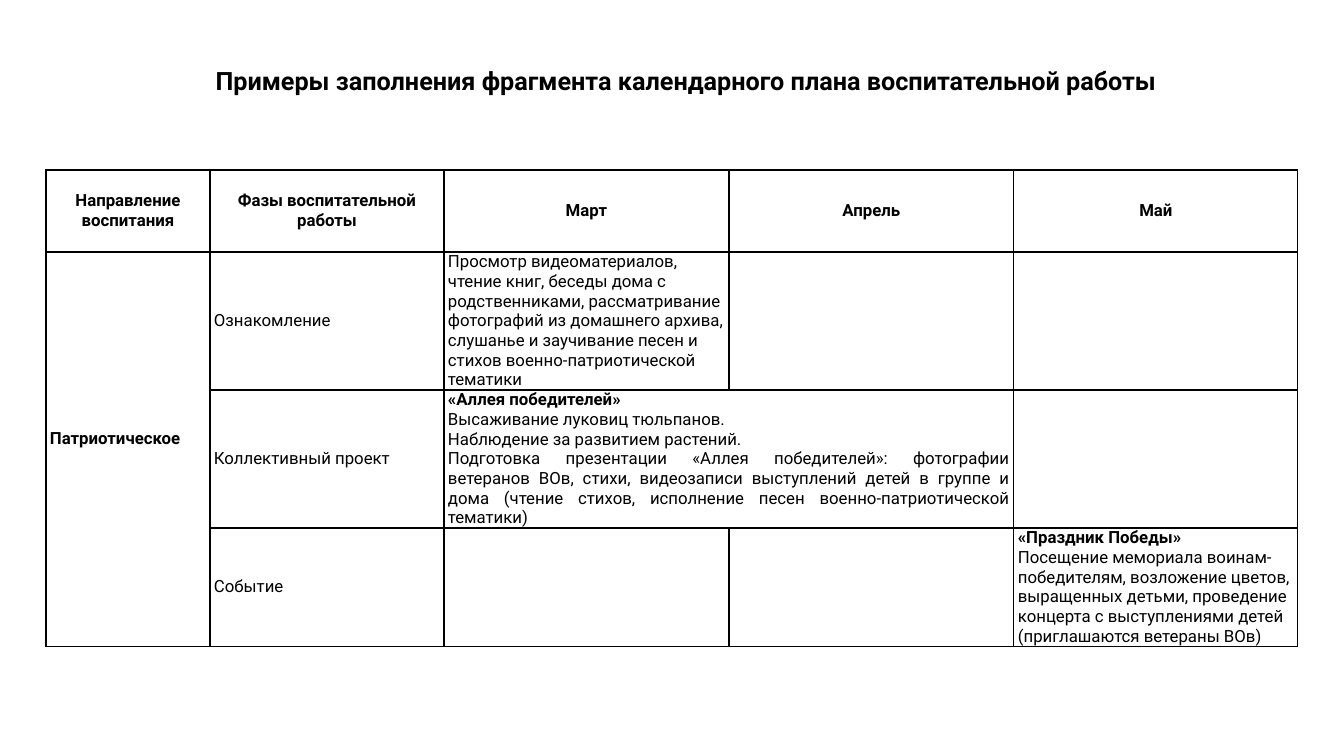
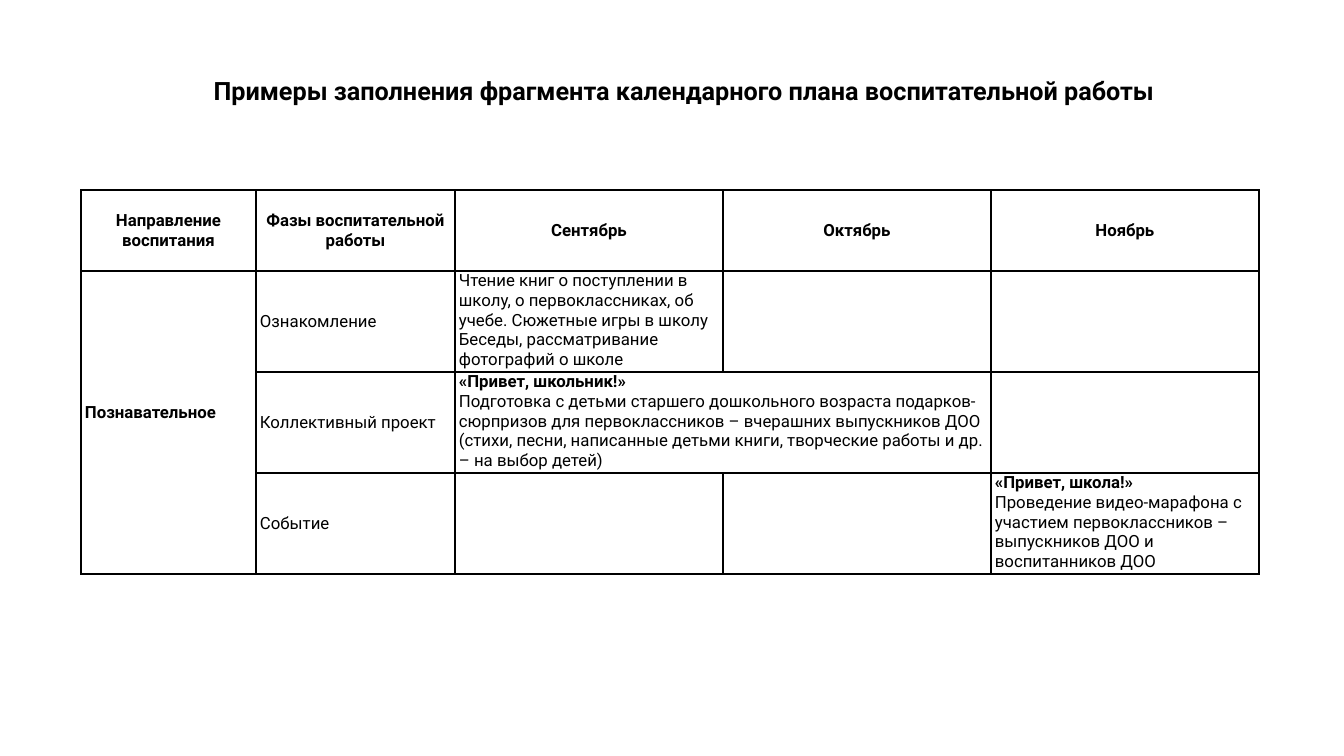
from dataclasses import dataclass

from lxml.etree import SubElement
from pptx import Presentation
from pptx.dml.color import RGBColor
from pptx.enum.text import MSO_ANCHOR, PP_ALIGN
from pptx.oxml import parse_xml
from pptx.oxml.ns import nsdecls, qn
from pptx.util import Emu, Pt

SLIDE_W, SLIDE_H = 1344, 756
EMU_PER_PX = 12192000 / SLIDE_W

BLACK = RGBColor(0x00, 0x00, 0x00)
FONT = "Roboto"
TITLE_FONT = {"name": FONT, "size": Pt(18), "bold": True}
CELL_FONT = {"name": FONT, "size": Pt(12)}

TITLE = "Примеры заполнения фрагмента календарного плана воспитательной работы"
TITLE_W, TITLE_H = 1186, 40
HEADINGS = ["Направление воспитания", "Фазы воспитательной работы"]
PHASES = ["Ознакомление", "Коллективный проект", "Событие"]
CELL_INSET = 4
DIRECTION_LIFT = 20


@dataclass
class Plan:
    title_at: tuple
    table_at: tuple
    cols: list
    rows: list
    months: list
    direction: str
    intro: list
    project: list
    event: list
    project_align: PP_ALIGN = PP_ALIGN.LEFT
    text_anchor: MSO_ANCHOR = MSO_ANCHOR.MIDDLE


PLANS = [
    Plan(
        title_at=(93, 60),
        table_at=(46, 170),
        cols=[164, 234, 285, 285, 284],
        rows=[82, 138, 138, 118],
        months=["Март", "Апрель", "Май"],
        direction="Патриотическое",
        intro=["Просмотр видеоматериалов, чтение книг, беседы дома с родственниками, "
               "рассматривание фотографий из домашнего архива, слушанье и заучивание "
               "песен и стихов военно-патриотической тематики"],
        project=["«Аллея победителей»",
                 "Высаживание луковиц тюльпанов.",
                 "Наблюдение за развитием растений.",
                 "Подготовка презентации «Аллея победителей»: фотографии ветеранов ВОв, "
                 "стихи, видеозаписи выступлений детей в группе и дома (чтение стихов, "
                 "исполнение песен военно-патриотической тематики)"],
        event=["«Праздник Победы»",
               "Посещение мемориала воинам-победителям, возложение цветов, выращенных "
               "детьми, проведение концерта с выступлениями детей (приглашаются "
               "ветераны ВОв)"],
        project_align=PP_ALIGN.JUSTIFY,
    ),
    Plan(
        title_at=(91, 70),
        table_at=(81, 190),
        cols=[175, 199, 268, 268, 268],
        rows=[81, 101, 101, 101],
        months=["Сентябрь", "Октябрь", "Ноябрь"],
        direction="Познавательное",
        intro=["Чтение книг о поступлении в школу, о первоклассниках, об учебе. "
               "Сюжетные игры в школу",
               "Беседы, рассматривание фотографий о школе"],
        project=["«Привет, школьник!»",
                 "Подготовка с детьми старшего дошкольного возраста подарков-сюрпризов "
                 "для первоклассников – вчерашних выпускников ДОО (стихи, песни, "
                 "написанные детьми книги, творческие работы и др. – на выбор детей)"],
        event=["«Привет, школа!»",
               "Проведение видео-марафона с участием первоклассников – выпускников ДОО "
               "и воспитанников ДОО"],
        text_anchor=MSO_ANCHOR.TOP,
    ),
]


def px(n):
    return Emu(round(n * EMU_PER_PX))


def set_font(font, values):
    for name, value in values.items():
        setattr(font, name, value)
    font.color.rgb = BLACK


def format_cell(cell):
    """Give the cell no fill, tight insets and a thin black border on each side."""
    cell.fill.background()
    cell.margin_left = cell.margin_right = px(CELL_INSET)
    cell.margin_top = cell.margin_bottom = 0
    tc_pr = cell._tc.get_or_add_tcPr()
    for i, side in enumerate("LRTB"):
        ln = parse_xml(f'<a:ln{side} {nsdecls("a")} w="{Pt(1)}"/>')
        fill = SubElement(ln, qn("a:solidFill"))
        SubElement(fill, qn("a:srgbClr"), val=str(BLACK))
        tc_pr.insert(i, ln)


def write_cell(cell, texts, bold_count=0, align=PP_ALIGN.LEFT, anchor=MSO_ANCHOR.MIDDLE):
    """Write one paragraph per text, the first bold_count of them bold."""
    cell.vertical_anchor = anchor
    tf = cell.text_frame
    for i, text in enumerate(texts):
        p = tf.add_paragraph() if i else tf.paragraphs[0]
        p.alignment = align
        r = p.add_run()
        r.text = text
        set_font(r.font, {**CELL_FONT, "bold": i < bold_count})


def add_title(s, x, y):
    sp = s.shapes.title
    sp.left, sp.top, sp.width, sp.height = map(px, (x, y, TITLE_W, TITLE_H))
    p = sp.text_frame.paragraphs[0]
    p.alignment = PP_ALIGN.CENTER
    r = p.add_run()
    r.text = TITLE
    set_font(r.font, TITLE_FONT)


def add_plan_table(s, plan):
    x, y = plan.table_at
    box = map(px, (x, y, sum(plan.cols), sum(plan.rows)))
    table = s.shapes.add_table(len(plan.rows), len(plan.cols), *box).table
    table.first_row = table.horz_banding = False
    for col, width in zip(table.columns, plan.cols):
        col.width = px(width)
    for row, height in zip(table.rows, plan.rows):
        row.height = px(height)
    for cell in table.iter_cells():
        format_cell(cell)

    for c, heading in enumerate(HEADINGS + plan.months):
        write_cell(table.cell(0, c), [heading], 1, PP_ALIGN.CENTER)
    for r, phase in enumerate(PHASES, 1):
        write_cell(table.cell(r, 1), [phase])

    direction, project = table.cell(1, 0), table.cell(2, 2)
    direction.merge(table.cell(3, 0))
    direction.margin_bottom = px(DIRECTION_LIFT)
    project.merge(table.cell(2, 3))
    write_cell(direction, [plan.direction], 1)
    write_cell(table.cell(1, 2), plan.intro, anchor=plan.text_anchor)
    write_cell(project, plan.project, 1, plan.project_align, plan.text_anchor)
    write_cell(table.cell(3, 4), plan.event, 1, anchor=plan.text_anchor)


def main():
    prs = Presentation()
    prs.slide_width, prs.slide_height = px(SLIDE_W), px(SLIDE_H)
    title_only = prs.slide_layouts[5]
    for plan in PLANS:
        s = prs.slides.add_slide(title_only)
        add_title(s, *plan.title_at)
        add_plan_table(s, plan)
    prs.save("out.pptx")


if __name__ == "__main__":
    main()
